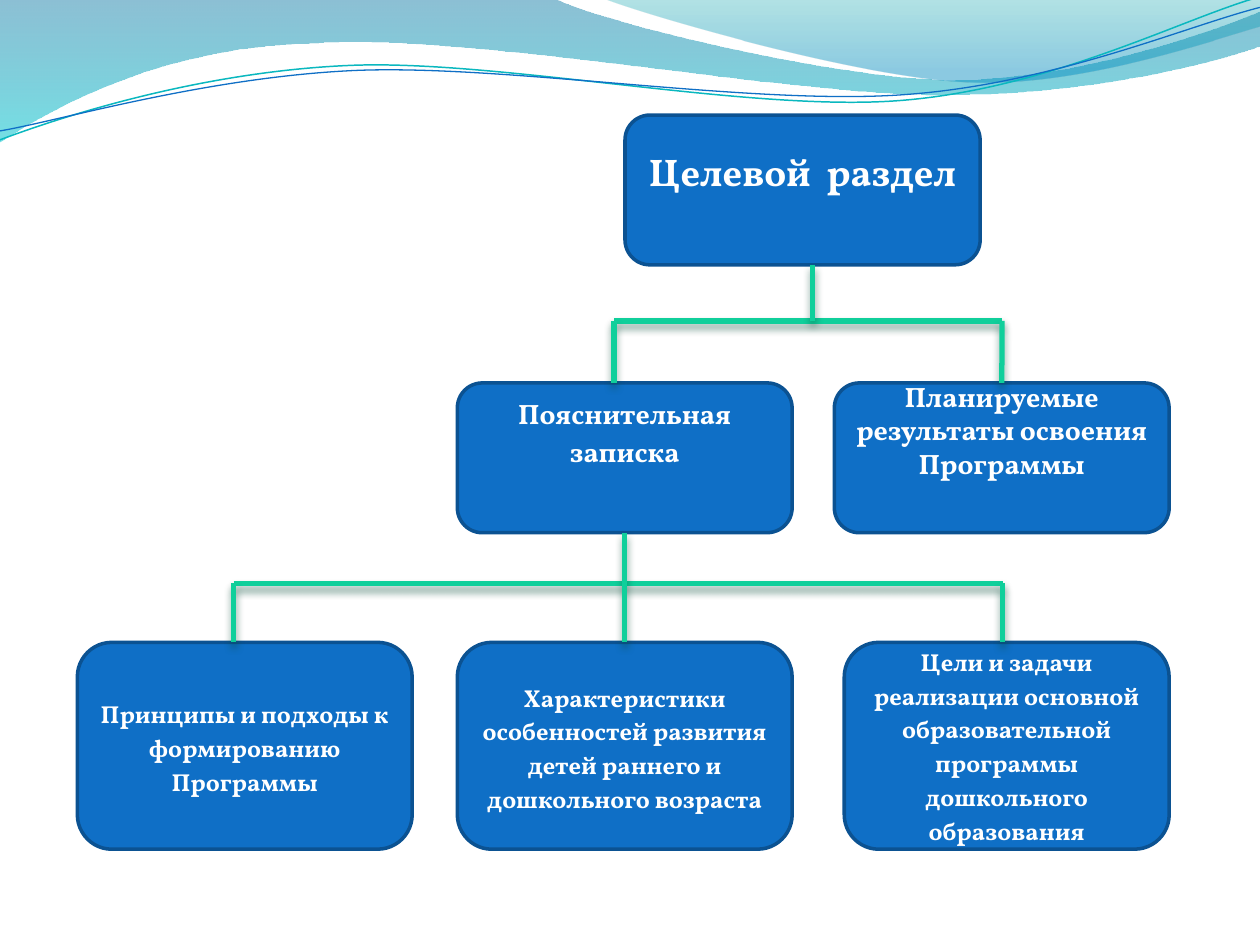
from pptx import Presentation
from pptx.dml.color import RGBColor
from pptx.enum.shapes import MSO_CONNECTOR as CONN, MSO_SHAPE as SHAPE
from pptx.enum.text import MSO_ANCHOR as ANCHOR, PP_ALIGN as ALIGN
from pptx.oxml import parse_xml
from pptx.oxml.ns import nsdecls, qn
from pptx.util import Cm, Pt

BLUE, NAVY, GREEN, WHITE = "0F6FC6", "0B5292", "10CF9B", "FFFFFF"
SHADE = "044A37"
FONT = "Vollkorn"
TOP, BOTTOM = 0, 2  # connection sites

# Outlines in cm: one point is a straight side, three are a Bezier curve
BAND = [
    [(0, 0)], [(11.18, -0.03)],
    [(12.09, 0.43), (16.87, 1.6), (19.25, 1.6)],
    [(21.67, 1.6), (24.33, 0.66), (25.4, 0.23)],
    [(25.43, 0.91)],
    [(24.97, 1.12), (22.1, 1.93), (18.95, 1.91)],
    [(15.8, 1.91), (9.7, 0.71), (6.53, 0.86)],
    [(3.28, 0.91), (1.17, 2.11), (-0.03, 2.87)],
]
CREST = [
    [(12.17, -0.03)],
    [(12.93, 0.28), (17.32, 1.57), (19.53, 1.65)],
    [(21.74, 1.75), (24.41, 0.81), (25.4, 0.53)],
    [(25.4, 0)],
]
TEAL_CURVE = [
    [(0, 2.82)],
    [(1.22, 2.36), (4.01, 1.45), (7.04, 1.32)],
    [(10.03, 1.19), (15.06, 2.26), (18.11, 2.03)],
    [(21.16, 1.8), (23.83, 0.38), (25.35, -0.05)],
]
BLUE_CURVE = [
    [(0, 2.64)],
    [(1.19, 2.44), (4.17, 1.55), (7.19, 1.42)],
    [(10.24, 1.3), (15.16, 2.13), (18.21, 1.91)],
    [(21.23, 1.7), (23.9, 0.53), (25.4, 0.15)],
]


def rgb(value):
    return RGBColor.from_string(value)


def add_outline(slide, outline, close):
    points = [(x * 1000, y * 1000) for part in outline for x, y in part]
    builder = slide.shapes.build_freeform(*points[0], scale=Cm(0.001))
    builder.add_line_segments(points[1:], close=close)
    s = builder.convert_to_shape()
    s.shadow.inherit = False
    # Turn each three-point part into a true curve
    sides = iter(list(s._element.iter(qn("a:lnTo"))))
    for part in outline[1:]:
        group = [next(sides) for _ in part]
        if len(group) == 3:
            curve = parse_xml(f'<a:cubicBezTo {nsdecls("a")}/>')
            group[0].addprevious(curve)
            for side in group:
                curve.append(side[0])
                side.getparent().remove(side)
    return s


def add_wave(slide, outline, stops):
    s = add_outline(slide, outline, True)
    s.line.fill.background()
    gs = "".join(
        f'<a:gs pos="{pos * 1000}"><a:srgbClr val="{color}">'
        f'<a:alpha val="{alpha * 1000}"/></a:srgbClr></a:gs>'
        for pos, color, alpha in stops)
    grad = parse_xml(f'<a:gradFill {nsdecls("a")}><a:gsLst>{gs}</a:gsLst>'
                     '<a:lin ang="5400000" scaled="0"/></a:gradFill>')
    s._element.spPr.find(qn("a:custGeom")).addnext(grad)


def add_curve(slide, outline, color, width):
    s = add_outline(slide, outline, False)
    s.fill.background()
    s.line.color.rgb = rgb(color)
    s.line.width = Pt(width)


def add_box(slide, x, y, w, h, text, size, lift=0, spacing=1.15):
    """Rounded box; lift is the room kept free below the text."""
    s = slide.shapes.add_shape(SHAPE.ROUNDED_RECTANGLE, Cm(x), Cm(y), Cm(w), Cm(h))
    s.shadow.inherit = False
    s.fill.solid()
    s.fill.fore_color.rgb = rgb(BLUE)
    s.line.color.rgb = rgb(NAVY)
    s.line.width = Pt(2)
    tf = s.text_frame
    frame = {"word_wrap": True, "vertical_anchor": ANCHOR.MIDDLE,
             "margin_top": 0, "margin_bottom": Cm(lift)}
    for name, value in frame.items():
        setattr(tf, name, value)
    p = tf.paragraphs[0]
    p.alignment, p.line_spacing = ALIGN.CENTER, spacing
    r = p.add_run()
    r.text = text
    for name, value in {"name": FONT, "size": Pt(size), "bold": True}.items():
        setattr(r.font, name, value)
    r.font.color.rgb = rgb(WHITE)
    return s


def add_line(slide, x1, y1, x2, y2, begin=None, end=None):
    c = slide.shapes.add_connector(CONN.STRAIGHT, Cm(x1), Cm(y1), Cm(x2), Cm(y2))
    c.line.color.rgb = rgb(GREEN)
    c.line.width = Pt(3)
    c._element.spPr.append(parse_xml(
        f'<a:effectLst {nsdecls("a")}><a:outerShdw blurRad="{Pt(4.5)}" dist="{Pt(3)}" '
        f'dir="5400000" rotWithShape="0"><a:srgbClr val="{SHADE}">'
        '<a:alpha val="48000"/></a:srgbClr></a:outerShdw></a:effectLst>'))
    if begin:
        c.begin_connect(begin, BOTTOM)
    if end:
        c.end_connect(end, TOP)


def main():
    prs = Presentation()
    prs.slide_width, prs.slide_height = Cm(25.4), Cm(19.05)
    slide = prs.slides.add_slide(prs.slide_layouts[6])

    # Waves along the top
    add_wave(slide, BAND, [(0, "0074A1", 45), (100, "00C6CF", 55)])
    add_wave(slide, CREST, [(0, "00A1A9", 30), (80, "008BBF", 45)])
    add_curve(slide, TEAL_CURVE, "0AB8BF", 0.85)
    add_curve(slide, BLUE_CURVE, BLUE, 0.75)

    # Contents of the explanatory note
    row_y, row_h = 12.95, 4.17
    add_box(slide, 1.56, row_y, 6.75, row_h,
            "Принципы и подходы к формированию Программы", 14)
    traits = add_box(slide, 9.22, row_y, 6.75, row_h,
                     "Характеристики особенностей развития детей раннего и "
                     "дошкольного возраста", 14)
    add_box(slide, 17.02, row_y, 6.55, row_h,
            "Цели и задачи реализации основной образовательной программы "
            "дошкольного образования", 14, lift=0.08)

    # Section and its two parts
    add_box(slide, 12.6, 2.32, 7.16, 3.02, "Целевой  раздел", 22, lift=0.91)
    note = add_box(slide, 9.22, 7.72, 6.75, 3.02, "Пояснительная записка", 16, lift=1.13)
    results = add_box(slide, 16.82, 7.72, 6.75, 3.02,
                      "Планируемые результаты освоения Программы", 16,
                      lift=1.13, spacing=1.0)

    # Lower branch
    left, right, bar = 4.71, 20.21, 11.76
    add_line(slide, left, bar, right, bar)
    add_line(slide, 12.6, 10.74, 12.6, row_y, begin=note, end=traits)
    for x in (left, right):
        add_line(slide, x, bar, x, row_y)

    # Upper branch
    left, right, bar = 12.38, 20.2, 6.47
    add_line(slide, left, bar, right, bar)
    add_line(slide, 16.38, 5.34, 16.38, bar)
    add_line(slide, left, bar, left, 7.72)
    add_line(slide, right, bar, right, 7.72, end=results)

    prs.save("out.pptx")


if __name__ == "__main__":
    main()
